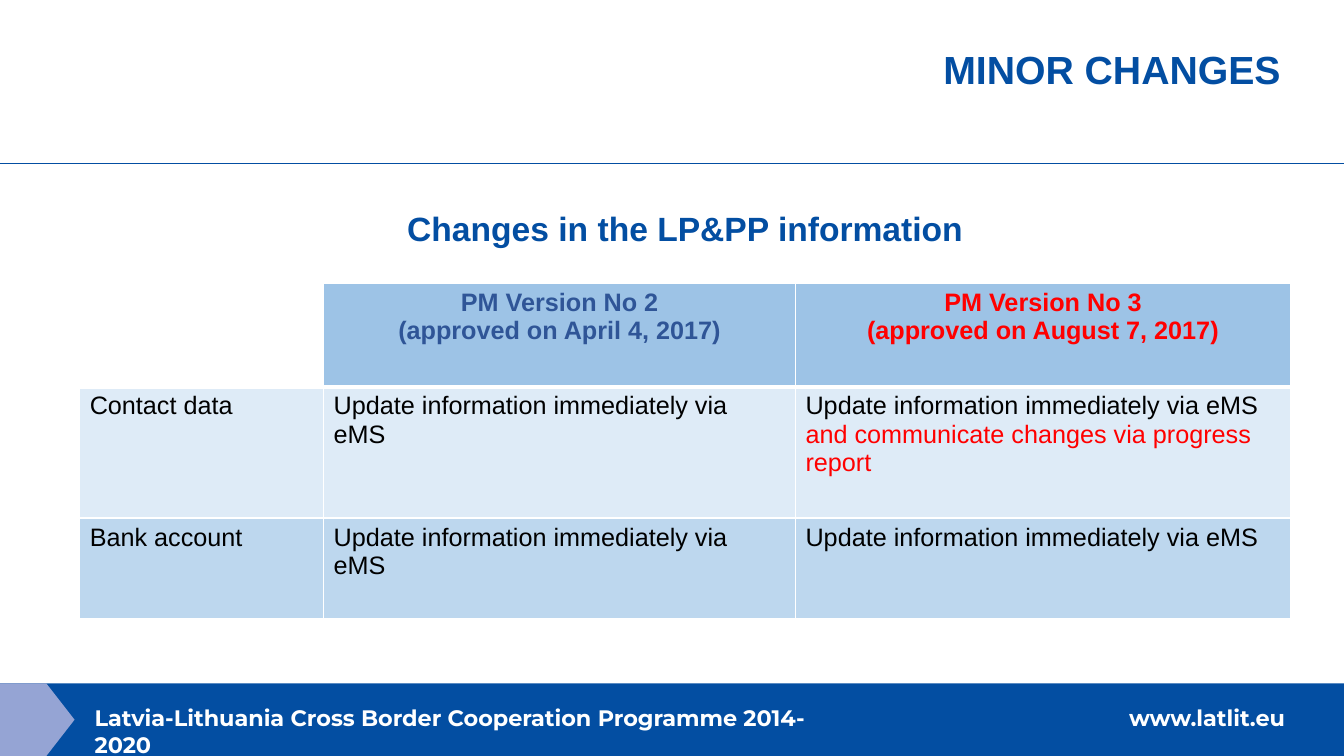
from lxml.etree import SubElement
from pptx import Presentation
from pptx.dml.color import RGBColor
from pptx.enum.shapes import MSO_CONNECTOR, MSO_SHAPE
from pptx.enum.text import MSO_ANCHOR, PP_ALIGN
from pptx.oxml import parse_xml
from pptx.oxml.ns import nsdecls, qn
from pptx.util import Inches, Pt

COLORS = {
    "blue": "034EA2", "lilac": "95A4D4", "white": "FFFFFF", "black": "000000",
    "red": "FF0000", "navy": "2F5597", "header": "9DC3E6",
    "light": "DEEBF7", "medium": "BDD7EE",
}
WIDTH, HEIGHT = 13.33, 7.5
LEFT, CONTENT_WIDTH = 0.79, 12.01
COLUMN_WIDTHS = [2.42, 4.68, 4.91]
UPDATE = "Update information immediately via eMS"


def color(name):
    return RGBColor.from_string(COLORS[name])


def place(shape, left, top, width, height):
    shape.left, shape.top = Inches(left), Inches(top)
    shape.width, shape.height = Inches(width), Inches(height)


def format_paragraph(paragraph, size, color_name, bold=False, align=PP_ALIGN.LEFT, name="Arial"):
    paragraph.alignment = align
    for run in paragraph.runs:
        run.font.name = name
        run.font.size = Pt(size)
        run.font.bold = bold
        run.font.color.rgb = color(color_name)


def fill_shape(shape, color_name):
    shape.shadow.inherit = False
    shape.fill.solid()
    shape.fill.fore_color.rgb = color(color_name)
    shape.line.fill.background()


def add_label(slide, text, left, top, width, height, size, color_name, align, name, wrap=True):
    box = slide.shapes.add_textbox(Inches(left), Inches(top), Inches(width), Inches(height))
    box.text_frame.word_wrap = wrap
    box.text_frame.text = text
    format_paragraph(box.text_frame.paragraphs[0], size, color_name, True, align, name)


def add_footer(slide, left, top, width, height):
    bar = slide.shapes.add_shape(
        MSO_SHAPE.RECTANGLE, Inches(left), Inches(top), Inches(width), Inches(height))
    fill_shape(bar, "blue")

    # Arrow-shaped marker at the left end
    outline = [(0.46, 0), (0.74, height / 2), (0.46, height), (0, height)]
    points = [(Inches(left + x), Inches(top + y)) for x, y in outline]
    builder = slide.shapes.build_freeform(Inches(left), Inches(top))
    builder.add_line_segments(points, close=True)
    fill_shape(builder.convert_to_shape(), "lilac")

    # Programme name and web address
    labels = [("Latvia-Lithuania Cross Border Cooperation Programme 2014-2020", 0.84, 7.73, True),
              ("www.latlit.eu", 11.1, 1.76, False)]
    for text, offset, label_width, wrap in labels:
        add_label(slide, text, left + offset, top + 0.16, label_width, 0.37,
                  16, "white", PP_ALIGN.LEFT, "Montserrat", wrap)


def add_heading(slide, left, top, width, height):
    title = slide.shapes.title
    place(title, left, top, width, height)
    title.text_frame.text = "MINOR CHANGES"
    title.text_frame.vertical_anchor = MSO_ANCHOR.TOP
    format_paragraph(title.text_frame.paragraphs[0], 28, "blue", True, PP_ALIGN.RIGHT)

    # Rule across the slide
    rule_top = Inches(top + 1.22)
    rule = slide.shapes.add_connector(
        MSO_CONNECTOR.STRAIGHT, 0, rule_top, Inches(WIDTH), rule_top)
    rule.line.color.rgb = color("blue")
    rule.line.width = Pt(0.5)
    SubElement(rule._element.spPr, qn("a:effectLst"))


def set_borders(cell, bottom=1):
    properties = cell._tc.get_or_add_tcPr()
    widths = {"lnL": 1, "lnR": 1, "lnT": 1, "lnB": bottom}
    for index, (side, points) in enumerate(widths.items()):
        properties.insert(index, parse_xml(
            f'<a:{side} {nsdecls("a")} w="{Pt(points)}"><a:solidFill>'
            f'<a:srgbClr val="{COLORS["white"]}"/></a:solidFill></a:{side}>'))


def add_changes_table(slide, left, top, width, rows, has_header=False):
    """Each row is (height, fill, cells); a cell is a list of (text, colour) lines."""
    frame = slide.shapes.add_table(
        len(rows), len(COLUMN_WIDTHS), Inches(left), Inches(top), Inches(width),
        Inches(sum(height for height, _, _ in rows)))
    table = frame.table
    table.first_row, table.horz_banding = has_header, False
    for column, column_width in zip(table.columns, COLUMN_WIDTHS):
        column.width = Inches(column_width)
    for row_index, (height, fill, cells) in enumerate(rows):
        table.rows[row_index].height = Inches(height)
        is_header = has_header and row_index == 0
        align = PP_ALIGN.CENTER if is_header else PP_ALIGN.LEFT
        for column_index, lines in enumerate(cells):
            cell = table.cell(row_index, column_index)
            cell.fill.solid()
            cell.fill.fore_color.rgb = color(fill if lines else "white")
            set_borders(cell, 3 if is_header else 1)
            cell.text_frame.text = "\n".join(text for text, _ in lines)
            for paragraph, (_, color_name) in zip(cell.text_frame.paragraphs, lines):
                format_paragraph(paragraph, 18, color_name, is_header, align)


def main():
    presentation = Presentation()
    presentation.slide_width, presentation.slide_height = Inches(WIDTH), Inches(HEIGHT)
    slide = presentation.slides.add_slide(presentation.slide_layouts[5])

    add_footer(slide, 0, 6.78, WIDTH, 0.72)
    add_heading(slide, 4.14, 0.4, 8.66, 0.57)
    add_label(slide, "Changes in the LP&PP information", LEFT, 2.01, CONTENT_WIDTH, 0.5,
              24, "blue", PP_ALIGN.CENTER, "Arial")

    # Comparison of the two manual versions
    update = (UPDATE, "black")
    add_changes_table(slide, LEFT, 2.81, CONTENT_WIDTH, [
        (1.03, "header", [
            [],
            [("PM Version No 2", "navy"), ("(approved on April 4, 2017)", "navy")],
            [("PM Version No 3", "red"), ("(approved on August 7, 2017)", "red")]]),
        (1.3, "light", [
            [("Contact data", "black")],
            [update],
            [update, ("and communicate changes via progress report", "red")]]),
    ], has_header=True)
    add_changes_table(slide, LEFT, 5.14, CONTENT_WIDTH, [
        (1, "medium", [[("Bank account", "black")], [update], [update]]),
    ])

    presentation.save("out.pptx")


if __name__ == "__main__":
    main()
